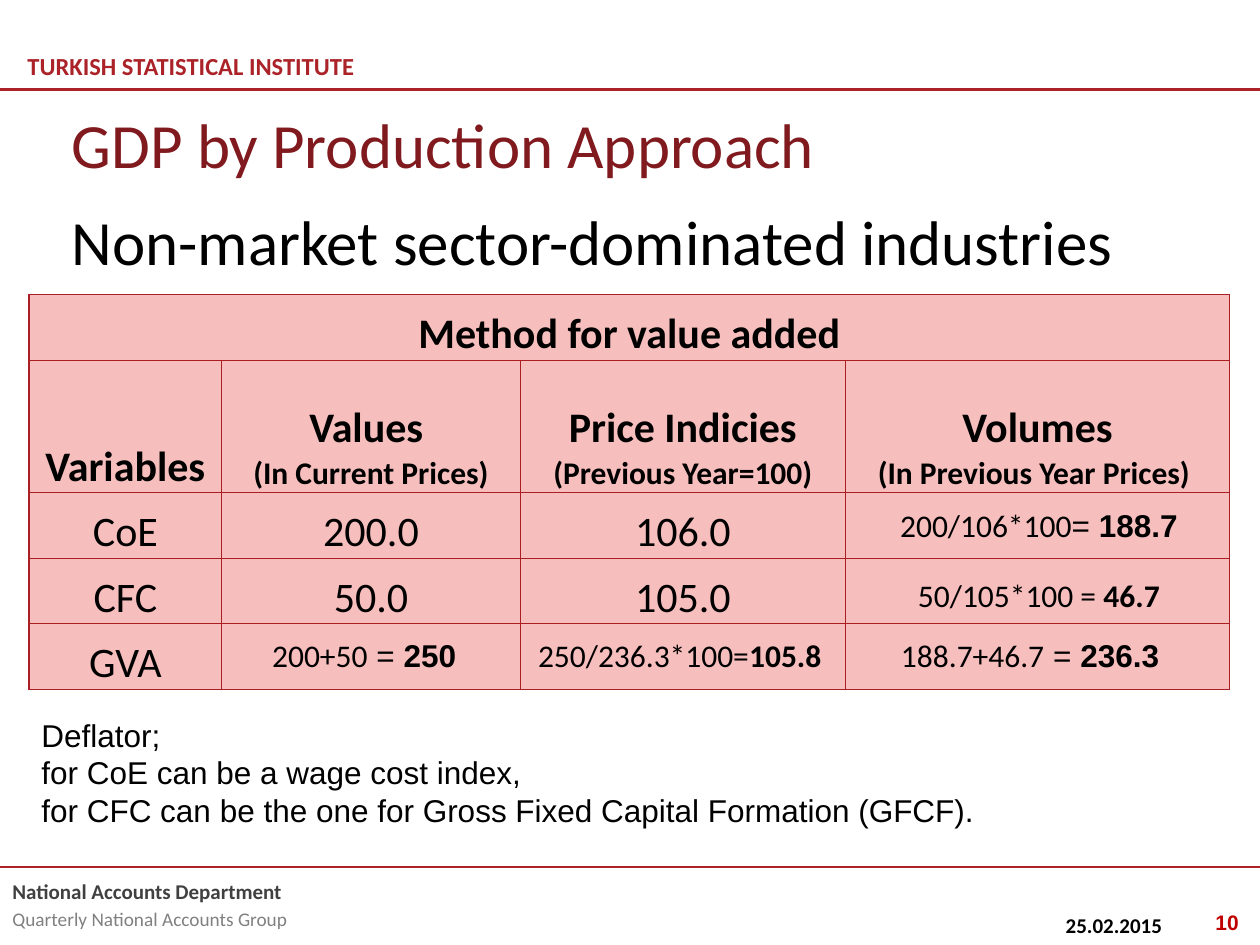
from typing import NamedTuple

from lxml.etree import SubElement as Sub
from pptx import Presentation
from pptx.dml.color import RGBColor as Rgb
from pptx.enum.shapes import MSO_CONNECTOR as Conn
from pptx.enum.text import MSO_ANCHOR as Anchor, MSO_AUTO_SIZE as Auto, PP_ALIGN as Align
from pptx.oxml.ns import qn
from pptx.util import Emu, Pt

PX = 9144  # 100 px to the inch
RED = Rgb(0xAB, 0x23, 0x28)
EDGE = Rgb(0xAB, 0x1F, 0x24)
DARK = Rgb(0x80, 0x1A, 0x1E)
PAGE = Rgb(0xC0, 0x00, 0x00)
PINK = Rgb(0xF6, 0xBE, 0xBD)
BLACK = Rgb(0, 0, 0)
WHITE = Rgb(255, 255, 255)
GREY = Rgb(0x40, 0x40, 0x40)
PALE = Rgb(0x80, 0x80, 0x80)


class Run(NamedTuple):
    text: str
    font: str = "Calibri"
    size: float = 18
    bold: bool = False
    color: Rgb = BLACK


class Box(NamedTuple):
    left: int
    top: int
    width: int
    height: int


class Sum(NamedTuple):
    box: Box
    runs: list[Run]


def px(n: int) -> Emu:
    return Emu(n * PX)


def put(frame, paras: list[list[Run]], *, align=Align.LEFT, anchor=Anchor.TOP, gap: float = 0) -> None:
    """Fill a text frame, one list of runs to a paragraph."""
    frame.word_wrap = True
    frame.vertical_anchor = anchor
    for i, runs in enumerate(paras):
        para = frame.paragraphs[0] if i == 0 else frame.add_paragraph()
        para.alignment = align
        if i and gap:
            para.space_before = Pt(gap)
        for item in runs:
            run = para.add_run()
            run.text = item.text
            font = run.font
            font.name, font.size, font.bold = item.font, Pt(item.size), item.bold
            font.color.rgb = item.color


def text(slide, box: Box, paras: list[list[Run]], **fmt) -> None:
    put(slide.shapes.add_textbox(*map(px, box)).text_frame, paras, **fmt)


def rule(slide, top: int) -> None:
    line = slide.shapes.add_connector(Conn.STRAIGHT, 0, px(top), px(1000), px(top))
    line.line.color.rgb = RED
    line.line.width = Pt(1.5)
    Sub(line._element.spPr, qn("a:effectLst"))


def style(cell) -> None:
    """Give a cell its borders, fill and margins."""
    props = cell._tc.get_or_add_tcPr()
    for side in ("lnL", "lnR", "lnT", "lnB"):
        edge = Sub(props, qn(f"a:{side}"), w=str(Pt(0.75)))
        Sub(Sub(edge, qn("a:solidFill")), qn("a:srgbClr"), val=str(EDGE))
    cell.fill.solid()
    cell.fill.fore_color.rgb = PINK
    cell.margin_left = cell.margin_right = cell.margin_top = px(1)
    cell.margin_bottom = 0


def head(name: str, note: str = "") -> list[list[Run]]:
    paras = [[Run(name, size=24, bold=True)]]
    return paras + [[Run(note, bold=True)]] if note else paras


def body(value: str) -> list[list[Run]]:
    return [[Run(value, size=24)]]


COLS = [153, 237, 258, 305]
ROWS = [52, 105, 52, 52, 52]
CELLS = [
    [head("Method for value added")],
    [
        head("Variables"),
        head("Values ", "(In Current Prices)"),
        head("Price Indicies", "(Previous Year=100)"),
        head("Volumes", "(In Previous Year Prices) "),
    ],
    [body(v) for v in ("CoE", "200.0", "106.0")],
    [body(v) for v in ("CFC", "50.0", "105.0")],
    [body("GVA")],
]

# Worked sums that lie over the empty cells
SUMS = [
    Sum(Box(672, 397, 305, 40),
        [Run("200/106*100"), Run("= ", "Arial"), Run("188.7", "Arial", bold=True)]),
    Sum(Box(672, 452, 305, 40), [Run("50/105*100 = "), Run("46.7", bold=True)]),
    Sum(Box(665, 500, 305, 40),
        [Run("188.7+46.7"), Run(" = ", "Arial"), Run("236.3", "Arial", bold=True)]),
    Sum(Box(172, 500, 234, 40),
        [Run("200+50"), Run(" = ", "Arial"), Run("250", "Arial", bold=True)]),
    Sum(Box(383, 500, 313, 40), [Run("250/236.3*100="), Run("105.8", bold=True)]),
]

NOTES = [
    "Deflator;",
    "for CoE can be a wage cost index,",
    "for CFC can be the one for Gross Fixed Capital Formation (GFCF).",
]


def grid(slide) -> None:
    box = Box(23, 234, sum(COLS), sum(ROWS))
    table = slide.shapes.add_table(len(ROWS), len(COLS), *map(px, box)).table
    table.first_row = table.horz_banding = False
    for col, width in zip(table.columns, COLS):
        col.width = px(width)
    for row, height in zip(table.rows, ROWS):
        row.height = px(height)
    for cell in table.iter_cells():
        style(cell)
    table.cell(0, 0).merge(table.cell(0, len(COLS) - 1))
    for r, row in enumerate(CELLS):
        for c, paras in enumerate(row):
            cell = table.cell(r, c)
            put(cell.text_frame, paras, align=Align.CENTER)
            cell.vertical_anchor = Anchor.BOTTOM


def main() -> None:
    deck = Presentation()
    deck.slide_width, deck.slide_height = px(1000), px(750)
    slide = deck.slides.add_slide(deck.slide_layouts[5])

    # Header and footer
    text(slide, Box(12, 33, 354, 39),
         [[Run("TURKISH STATISTICAL INSTITUTE", size=14, bold=True, color=RED)]],
         anchor=Anchor.MIDDLE)
    rule(slide, 71)
    rule(slide, 688)
    text(slide, Box(0, 692, 429, 53), [
        [Run("National Accounts Department", size=12, bold=True, color=GREY)],
        [Run("Quarterly National Accounts Group", size=11, color=PALE)],
    ], gap=2.4)
    text(slide, Box(836, 719, 130, 30), [[Run("25.02.2015", size=12, bold=True)]])
    text(slide, Box(913, 717, 80, 30),
         [[Run("10", "Arial", 12, True, PAGE)]], align=Align.RIGHT)

    # Title and subtitle
    title = slide.shapes.title
    title.left, title.top, title.width, title.height = map(px, Box(47, 78, 900, 71))
    title.line.color.rgb = WHITE
    title.line.width = Pt(0.75)
    put(title.text_frame, [[Run("GDP by Production Approach", size=36, color=DARK)]],
        anchor=Anchor.MIDDLE)
    title.text_frame.auto_size = Auto.NONE
    text(slide, Box(47, 156, 859, 71),
         [[Run("Non-market sector-dominated industries", size=36)]])

    # Table with its sums
    grid(slide)
    for item in SUMS:
        text(slide, item.box, [item.runs], align=Align.CENTER)

    # Notes below the table
    text(slide, Box(23, 563, 789, 101), [[Run(note, "Arial")] for note in NOTES])

    deck.save("out.pptx")


if __name__ == "__main__":
    main()
